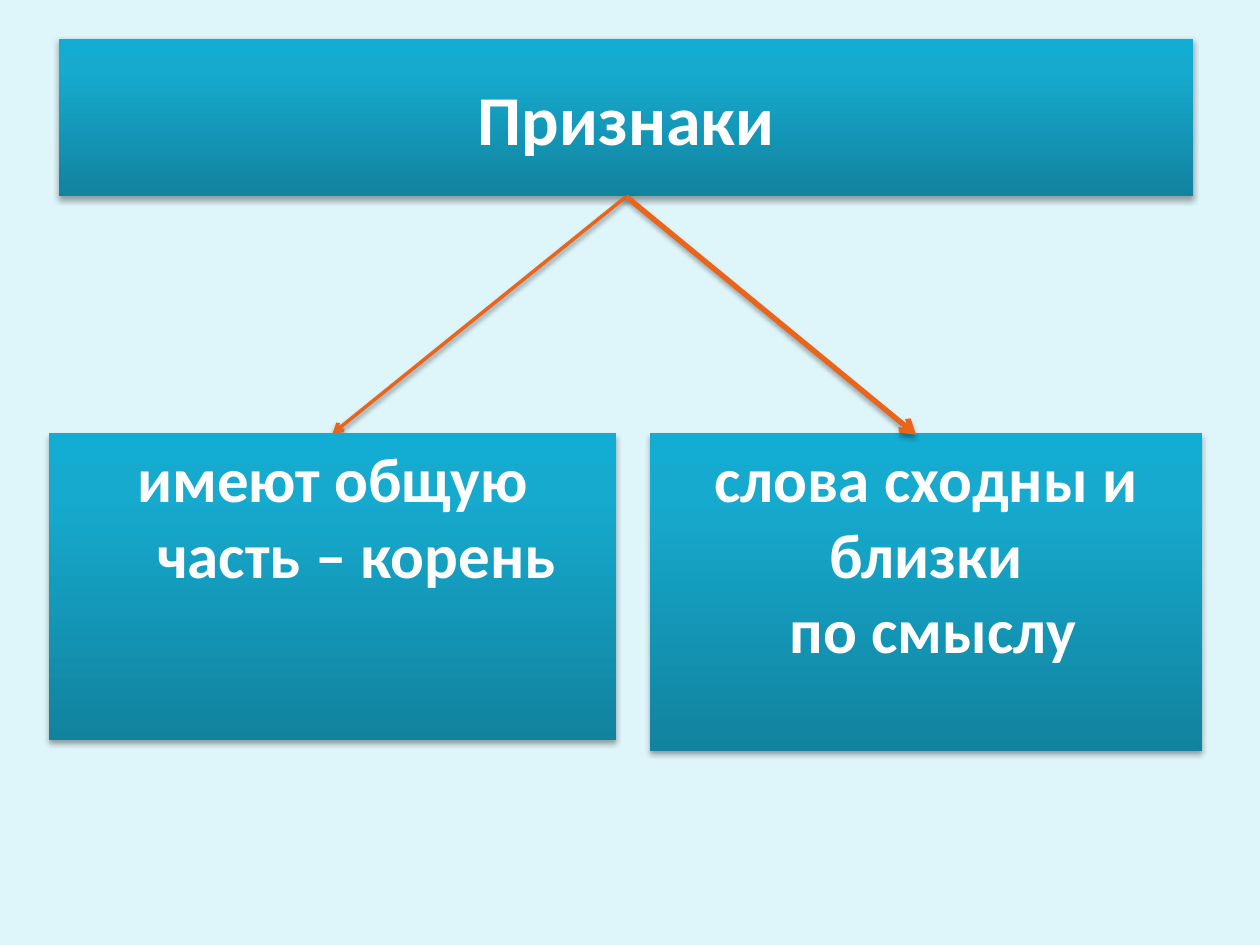
import copy

import pptx
import pptx.dml.color
import pptx.enum.shapes
import pptx.enum.text
import pptx.oxml
import pptx.oxml.ns
import pptx.util
from pptx.util import Inches

COLORS = {
    "background": "DEF5FA",
    "dark": "11839F",
    "mid": "16AACE",
    "light": "13ADD3",
    "arrow": "EB641B",
    "text": "FFFFFF",
    "shadow": "000000",
}
GRADIENT = [(0, "dark"), (0.8, "mid"), (1, "light")]
FONT = "Calibri"
qn = pptx.oxml.ns.qn


def rgb(name):
    return pptx.dml.color.RGBColor.from_string(COLORS[name])


def add_shadow(effects, alpha=35, dist=1.8):
    """Put a soft downward shadow into an effect list."""
    effects.append(pptx.oxml.parse_xml(
        f'<a:outerShdw {pptx.oxml.ns.nsdecls("a")} blurRad="{pptx.util.Pt(3.1)}" '
        f'dist="{pptx.util.Pt(dist)}" dir="5400000" rotWithShape="0">'
        f'<a:srgbClr val="{COLORS["shadow"]}"><a:alpha val="{alpha * 1000}"/>'
        f'</a:srgbClr></a:outerShdw>'))


def fill_gradient(sp):
    sp.fill.gradient()
    sp.fill.gradient_angle = 90
    stops = sp._element.spPr.find(qn("a:gradFill")).find(qn("a:gsLst"))
    stops.append(copy.deepcopy(stops[0]))
    for stop, (position, color) in zip(sp.fill.gradient_stops, GRADIENT):
        stop.position = position
        stop.color.rgb = rgb(color)


def write_text(tf, text, size=36, anchor="TOP", hanging=0):
    """Write centred bold text, one paragraph for each line."""
    tf.word_wrap = True
    tf.vertical_anchor = pptx.enum.text.MSO_ANCHOR[anchor]
    for i, line in enumerate(text.split("\n")):
        p = tf.add_paragraph() if i else tf.paragraphs[0]
        p.alignment = pptx.enum.text.PP_ALIGN.CENTER
        if hanging:
            pPr = p._p.get_or_add_pPr()
            pPr.set("marL", str(Inches(hanging)))
            pPr.set("indent", str(-Inches(hanging)))
        r = p.add_run()
        r.text = line
        r.font.name = FONT
        r.font.size = pptx.util.Pt(size)
        r.font.bold = True
        r.font.color.rgb = rgb("text")


def add_box(s, box, text, **text_format):
    sp = s.shapes.add_shape(pptx.enum.shapes.MSO_SHAPE.RECTANGLE,
                            *(Inches(v) for v in box))
    fill_gradient(sp)
    sp.line.fill.background()
    sp.shadow.inherit = False
    add_shadow(sp._element.spPr.find(qn("a:effectLst")))
    write_text(sp.text_frame, text, **text_format)
    return sp


def add_arrow(s, start, end, width, **shadow_format):
    """Draw an arrow from the bottom of the start box to a point."""
    line = s.shapes.add_connector(pptx.enum.shapes.MSO_CONNECTOR.STRAIGHT,
                                  0, 0, *(Inches(v) for v in end))
    line.begin_connect(start, 2)
    line.line.color.rgb = rgb("arrow")
    line.line.width = pptx.util.Pt(width)
    nsdecls = pptx.oxml.ns.nsdecls("a")
    line.line._get_or_add_ln().append(
        pptx.oxml.parse_xml(f'<a:tailEnd {nsdecls} type="arrow"/>'))
    effects = pptx.oxml.parse_xml(f"<a:effectLst {nsdecls}/>")
    line._element.spPr.append(effects)
    add_shadow(effects, **shadow_format)
    return line


def build_slide(prs):
    s = prs.slides.add_slide(prs.slide_layouts[6])
    s.background.fill.solid()
    s.background.fill.fore_color.rgb = rgb("background")

    # Heading and right-hand feature
    title = add_box(s, (0.47, 0.31, 9, 1.25), "Признаки", size=40, anchor="MIDDLE")
    add_box(s, (5.16, 3.44, 4.38, 2.52), "слова сходны и близки\n по смыслу")

    # Arrows lie beneath the left-hand feature
    left_arrow = add_arrow(s, title, (2.64, 3.44), 2, alpha=38, dist=1.6)
    add_arrow(s, title, (7.27, 3.45), 3)

    # Left-hand feature
    root = add_box(s, (0.39, 3.44, 4.5, 2.43), "имеют общую часть – корень",
                   hanging=0.38)
    left_arrow.end_connect(root, 0)


def main():
    prs = pptx.Presentation()
    prs.slide_width = Inches(10)
    prs.slide_height = Inches(7.5)
    build_slide(prs)
    prs.save("out.pptx")


if __name__ == "__main__":
    main()
